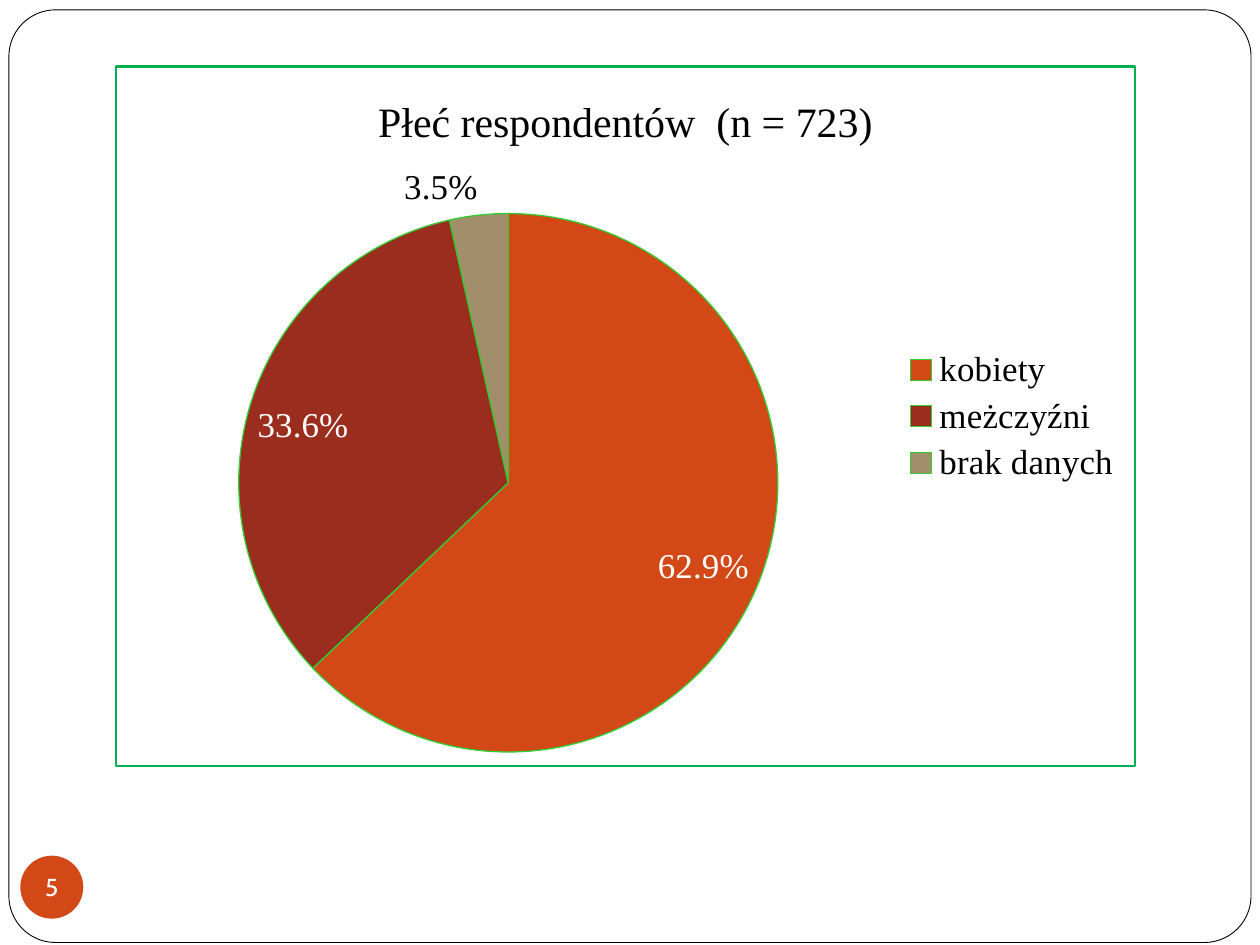
"""Build a slide with a pie chart of respondents by sex."""
from dataclasses import dataclass

from pptx import Presentation
from pptx.chart.data import CategoryChartData
from pptx.dml.color import RGBColor
from pptx.enum.chart import XL_CHART_TYPE, XL_LABEL_POSITION, XL_LEGEND_POSITION
from pptx.enum.shapes import MSO_SHAPE
from pptx.enum.text import MSO_ANCHOR, PP_ALIGN
from pptx.oxml import parse_xml
from pptx.oxml.ns import nsdecls, qn
from pptx.util import Cm, Pt


@dataclass(frozen=True)
class Theme:
    white: str = "FFFFFF"
    black: str = "000000"
    accent: str = "D34817"
    slices: tuple = ("D34817", "9B2D1F", "A28E6A")
    slice_line: str = "33CC33"
    border: str = "00B050"
    chart_font: str = "Times New Roman"
    number_font: str = "Cabin"
    title_size: int = 24
    label_size: int = 20
    number_size: int = 14
    base_size: int = 10


theme = Theme()


def set_font(font, name, size, color):
    font.name = name
    font.size = Pt(size)
    font.bold = False
    font.color.rgb = RGBColor.from_string(color)


def add_filled(page, preset, bounds, color):
    shape = page.shapes.add_shape(preset, *map(Cm, bounds))
    shape.shadow.inherit = False
    shape.fill.solid()
    shape.fill.fore_color.rgb = RGBColor.from_string(color)
    return shape


deck = Presentation()
deck.slide_width, deck.slide_height = Cm(25.4), Cm(19.05)
page = deck.slides.add_slide(deck.slide_layouts[6])

frame = add_filled(page, MSO_SHAPE.ROUNDED_RECTANGLE, (0.18, 0.2, 25.04, 18.8), theme.white)
frame.adjustments[0] = 0.05
frame.line.color.rgb = RGBColor.from_string(theme.black)
frame.line.width = Pt(0.5)

badge = add_filled(page, MSO_SHAPE.OVAL, (0.41, 17.25, 1.27, 1.27), theme.accent)
badge.line.fill.background()
text = badge.text_frame
text.margin_left = text.margin_right = text.margin_top = text.margin_bottom = 0
text.word_wrap = False
text.vertical_anchor = MSO_ANCHOR.MIDDLE
para = text.paragraphs[0]
para.text = "5"
para.alignment = PP_ALIGN.CENTER
set_font(para.font, theme.number_font, theme.number_size, theme.white)

data = CategoryChartData(number_format="0.0%")
data.categories = ["kobiety", "meżczyźni", "brak danych"]
data.add_series("Series 1", (0.629, 0.336, 0.035))
chart = page.shapes.add_chart(
    XL_CHART_TYPE.PIE, Cm(2.31), Cm(1.32), Cm(20.6), Cm(14.15), data
).chart
set_font(chart.font, theme.chart_font, theme.base_size, theme.black)

chart.has_title = True
title = chart.chart_title.text_frame.paragraphs[0]
title.text = "Płeć respondentów  (n = 723)"
set_font(title.font, theme.chart_font, theme.title_size, theme.black)
chart.chart_title.include_in_layout = False

chart.has_legend = True
chart.legend.position = XL_LEGEND_POSITION.RIGHT
chart.legend.include_in_layout = False
set_font(chart.legend.font, theme.chart_font, theme.label_size, theme.black)

plot = chart.plots[0]
plot.vary_by_categories = True
series = plot.series[0]
for index, color in enumerate(theme.slices):
    slice_format = series.points[index].format
    slice_format.fill.solid()
    slice_format.fill.fore_color.rgb = RGBColor.from_string(color)
    slice_format.line.color.rgb = RGBColor.from_string(theme.slice_line)
    slice_format.line.width = Pt(0.75)

labels = series.data_labels
labels.show_value = True
labels.show_percentage = False
labels.number_format = "0.0%"
labels.number_format_is_linked = False
labels.position = XL_LABEL_POSITION.INSIDE_END
set_font(labels.font, theme.chart_font, theme.label_size, theme.white)

small_label = series.points[2].data_label
set_font(small_label.font, theme.chart_font, theme.label_size, theme.black)
small_label.position = XL_LABEL_POSITION.OUTSIDE_END

plot_area = chart.element.chart.plotArea
for old_layout in plot_area.findall(qn("c:layout")):
    plot_area.remove(old_layout)
plot_area.insert(0, parse_xml(
    f'<c:layout {nsdecls("c")}><c:manualLayout><c:layoutTarget val="inner"/>'
    '<c:xMode val="edge"/><c:yMode val="edge"/><c:x val="0.12"/><c:y val="0.21"/>'
    '<c:w val="0.53"/><c:h val="0.77"/></c:manualLayout></c:layout>'
))
chart.element.chart.addprevious(
    parse_xml(f'<c:roundedCorners {nsdecls("c")} val="0"/>')
)
chart.element.chart.addnext(parse_xml(
    f'<c:spPr {nsdecls("c", "a")}><a:noFill/><a:ln w="{Pt(1.5)}"><a:solidFill>'
    f'<a:srgbClr val="{theme.border}"/></a:solidFill></a:ln></c:spPr>'
))

deck.save("out.pptx")
